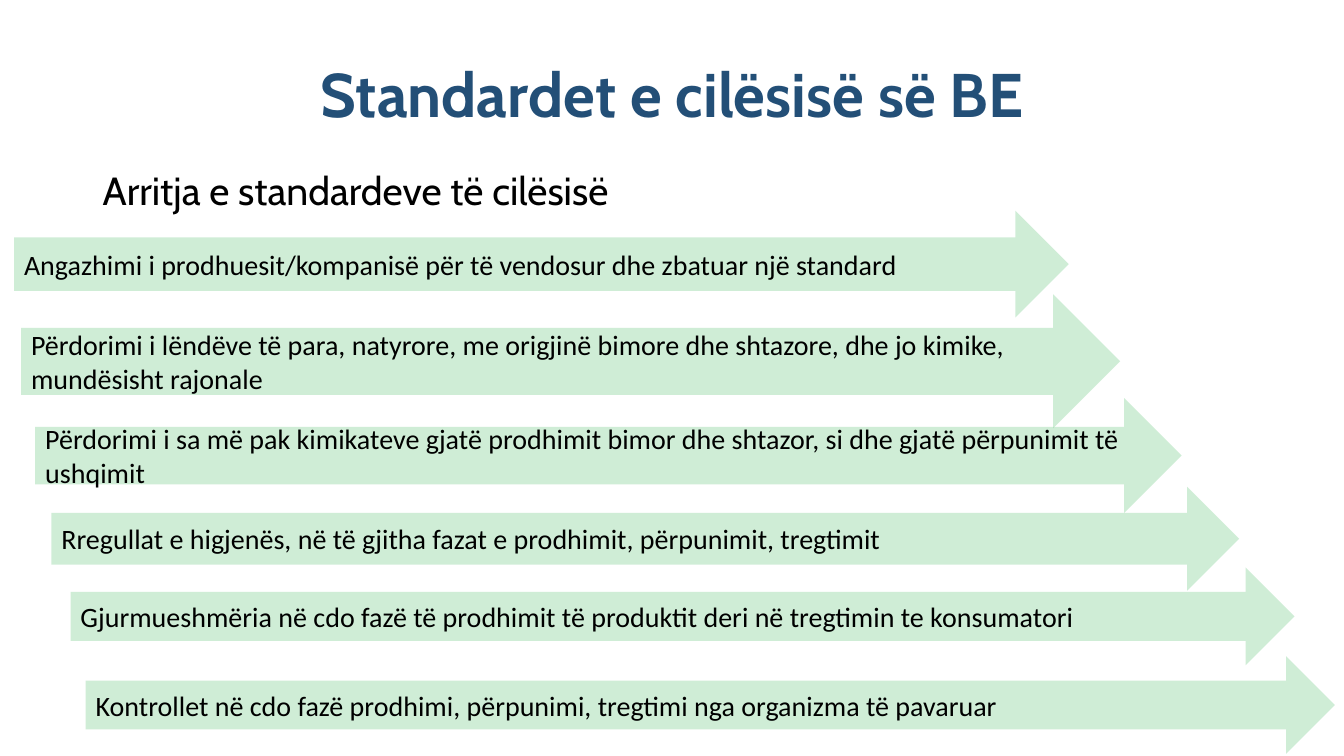
import pptx
import pptx.util
import pptx.dml.color
import pptx.enum.shapes
import pptx.enum.text
import pptx.oxml
import pptx.oxml.ns
from lxml import etree

Inches = pptx.util.Inches
Pt = pptx.util.Pt
ALIGN = pptx.enum.text.PP_ALIGN
ANCHOR = pptx.enum.text.MSO_ANCHOR

TITLE = "Standardet e cilësisë së BE"
LEAD = "Arritja e standardeve të cilësisë"
STEPS = [
    ("Angazhimi i prodhuesit/kompanisë për të vendosur dhe zbatuar një standard",
     (0.14, 2.09, 10.46, 1.06)),
    ("Përdorimi i lëndëve të para, natyrore, me origjinë bimore dhe shtazore, "
     "dhe jo kimike, mundësisht rajonale",
     (0.21, 2.92, 10.9, 1.33)),
    ("Përdorimi i sa më pak kimikateve gjatë prodhimit bimor dhe shtazor, "
     "si dhe gjatë përpunimit të ushqimit",
     (0.35, 3.95, 11.37, 1.14)),
    ("Rregullat e higjenës, në të gjitha fazat e prodhimit, përpunimit, tregtimit",
     (0.51, 4.83, 11.78, 1.03)),
    ("Gjurmueshmëria në cdo fazë të prodhimit të produktit deri në tregtimin te konsumatori",
     (0.7, 5.63, 12.14, 0.97)),
    ("Kontrollet në cdo fazë prodhimi, përpunimi, tregtimi nga organizma të pavaruar",
     (0.85, 6.51, 12.39, 0.97)),
]


def paint(color, code):
    color.rgb = pptx.dml.color.RGBColor.from_string(code)


def write(shape, text, size, face, code, anchor, align=ALIGN.LEFT, bold=False):
    frame = shape.text_frame
    frame.word_wrap = True
    frame.vertical_anchor = anchor
    para = frame.paragraphs[0]
    para.text = text
    para.alignment = align
    font = para.font
    font.size = Pt(size)
    font.name = face
    font.bold = bold
    paint(font.color, code)
    return para


def arrow(slide, text, box):
    shape = slide.shapes.add_shape(
        pptx.enum.shapes.MSO_SHAPE.RIGHT_ARROW, *map(Inches, box))
    shape.shadow.inherit = False
    shape.fill.solid()
    paint(shape.fill.fore_color, "7FCF92")
    tint = shape.fill._xPr.find(".//" + pptx.oxml.ns.qn("a:srgbClr"))
    etree.SubElement(tint, pptx.oxml.ns.qn("a:alpha")).set("val", "37000")
    shape.line.fill.background()
    write(shape, text, 20, "Calibri", "000000", ANCHOR.MIDDLE)


def main():
    deck = pptx.Presentation()
    deck.slide_width = Inches(13.33)
    deck.slide_height = Inches(7.5)
    slide = deck.slides.add_slide(deck.slide_layouts[6])

    head = slide.shapes.add_textbox(*map(Inches, (0.92, 0.24, 11.5, 1.45)))
    para = write(head, TITLE, 44, "Cabin", "234F77", ANCHOR.MIDDLE, ALIGN.CENTER, True)
    para.line_spacing = 0.9

    lead = slide.shapes.add_textbox(*map(Inches, (0.92, 1.65, 11.5, 0.54)))
    para = write(lead, LEAD, 28, "Cabin", "000000", ANCHOR.TOP)
    para.line_spacing = 0.9

    for text, box in STEPS:
        arrow(slide, text, box)

    deck.save("out.pptx")


if __name__ == "__main__":
    main()
